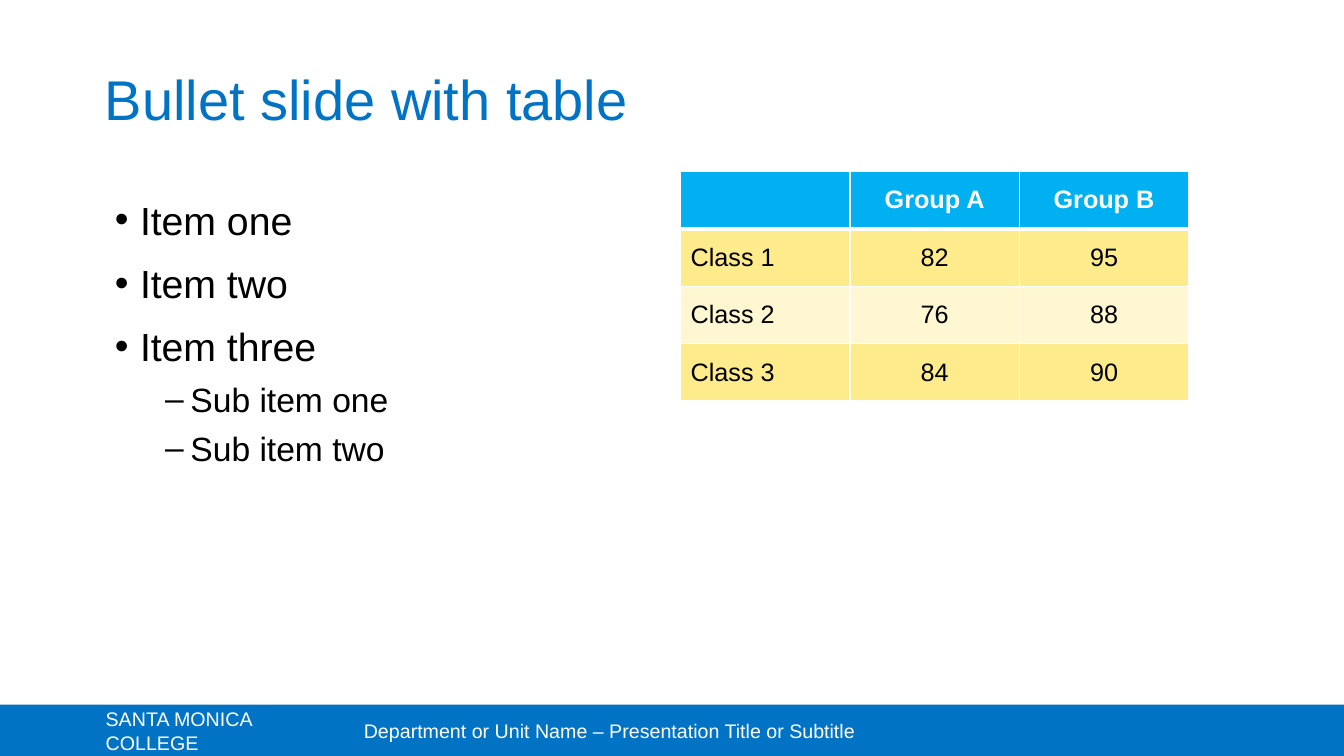
"""Build a slide with a bullet list, a score table and a footer band."""
from lxml import etree
from pptx import Presentation
from pptx.dml.color import RGBColor
from pptx.enum.shapes import MSO_SHAPE
from pptx.enum.text import MSO_ANCHOR, MSO_AUTO_SIZE, PP_ALIGN
from pptx.oxml import parse_xml
from pptx.oxml.ns import nsdecls, qn
from pptx.util import Inches, Pt

RECTANGLE = MSO_SHAPE.RECTANGLE
MIDDLE, TOP = MSO_ANCHOR.MIDDLE, MSO_ANCHOR.TOP
LEFT, CENTER = PP_ALIGN.LEFT, PP_ALIGN.CENTER
NO_AUTOFIT = MSO_AUTO_SIZE.NONE
BLUE, HEADER_BLUE, YELLOW = "0073C5", "00B0F0", "FED81B"
WHITE, BLACK = "FFFFFF", "000000"


def color(value):
    return RGBColor.from_string(value)


def write(paragraph, text, size=18, fill=BLACK, bold=False, align=LEFT,
          before=0, spacing=None, bullet=None, indent=0):
    paragraph.alignment = align
    paragraph.space_before = Pt(before)
    if spacing:
        paragraph.line_spacing = spacing
    if bullet:
        properties = paragraph._p.get_or_add_pPr()
        properties.set("marL", str(Inches(indent)))
        properties.set("indent", str(Inches(-0.25)))
        etree.SubElement(properties, qn("a:buFont")).set("typeface", "Arial")
        etree.SubElement(properties, qn("a:buChar")).set("char", bullet)
    run = paragraph.add_run()
    run.text = text
    run.font.name = "Arial"
    run.font.size = Pt(size)
    run.font.bold = bold
    run.font.color.rgb = color(fill)


presentation = Presentation()
presentation.slide_width = Inches(13.33)
presentation.slide_height = Inches(7.5)
slide = presentation.slides.add_slide(presentation.slide_layouts[5])

band = slide.shapes.add_shape(
    RECTANGLE, Inches(0), Inches(6.99), Inches(13.33), Inches(0.51))
band.shadow.inherit = False
band.fill.solid()
band.fill.fore_color.rgb = color(BLUE)
band.line.fill.background()

footers = [
    (0.95, 2.56, "SANTA MONICA COLLEGE"),
    (3.51, 6.48, "Department or Unit Name – Presentation Title or Subtitle"),
]
for left, width, text in footers:
    footer = slide.shapes.add_textbox(
        Inches(left), Inches(7), Inches(width), Inches(0.5))
    footer.text_frame.word_wrap = True
    footer.text_frame.vertical_anchor = MIDDLE
    write(footer.text_frame.paragraphs[0], text, size=14, fill=WHITE)

title = slide.shapes.title
title.left, title.top = Inches(1.04), Inches(0.54)
title.width, title.height = Inches(11.25), Inches(0.95)
title_frame = title.text_frame
title_frame.auto_size = NO_AUTOFIT
title_frame.vertical_anchor = MIDDLE
title_frame.margin_left = title_frame.margin_right = Inches(0)
title_frame.margin_top = title_frame.margin_bottom = Inches(0)
write(title_frame.paragraphs[0], "Bullet slide with table",
      size=40, fill=BLUE, spacing=0.9)

items = [
    ("Item one", 0),
    ("Item two", 0),
    ("Item three", 0),
    ("Sub item one", 1),
    ("Sub item two", 1),
]
levels = [
    dict(size=28, before=10, bullet="•", indent=0.25),
    dict(size=24, before=5, bullet="–", indent=0.75),
]
body = slide.shapes.add_textbox(
    Inches(1.04), Inches(1.84), Inches(5.75), Inches(4.66))
body_frame = body.text_frame
body_frame.word_wrap = True
body_frame.vertical_anchor = TOP
body_frame.margin_top = Inches(0.08)
for index, (text, level) in enumerate(items):
    paragraph = body_frame.add_paragraph() if index else body_frame.paragraphs[0]
    paragraph.level = level
    style = dict(levels[level])
    if index == 0:
        style["before"] = 0
    write(paragraph, text, spacing=1.05, **style)

scores = [
    ["", "Group A", "Group B"],
    ["Class 1", "82", "95"],
    ["Class 2", "76", "88"],
    ["Class 3", "84", "90"],
]
table = slide.shapes.add_table(
    len(scores), len(scores[0]),
    Inches(6.75), Inches(1.7), Inches(5.04), Inches(2.27)).table
for column in table.columns:
    column.width = Inches(1.68)
for row in table.rows:
    row.height = Inches(0.57)

for row_index, values in enumerate(scores):
    header = row_index == 0
    for column_index, value in enumerate(values):
        cell = table.cell(row_index, column_index)
        cell.vertical_anchor = MIDDLE
        cell_properties = cell._tc.get_or_add_tcPr()
        for side in "LRTB":
            thick = (header and side == "B") or (row_index == 1 and side == "T")
            cell_properties.append(parse_xml(
                f'<a:ln{side} {nsdecls("a")} w="{Pt(3 if thick else 1)}">'
                f'<a:solidFill><a:srgbClr val="{WHITE}"/></a:solidFill></a:ln{side}>'))
        cell.fill.solid()
        cell.fill.fore_color.rgb = color(HEADER_BLUE if header else YELLOW)
        if not header:
            opacity = 50 if row_index % 2 else 20
            fill_color = cell_properties.find(qn("a:solidFill")).find(qn("a:srgbClr"))
            etree.SubElement(fill_color, qn("a:alpha")).set("val", str(opacity * 1000))
        if value:
            write(cell.text_frame.paragraphs[0], value,
                  fill=WHITE if header else BLACK, bold=header,
                  align=CENTER if column_index else LEFT)

presentation.save("out.pptx")
